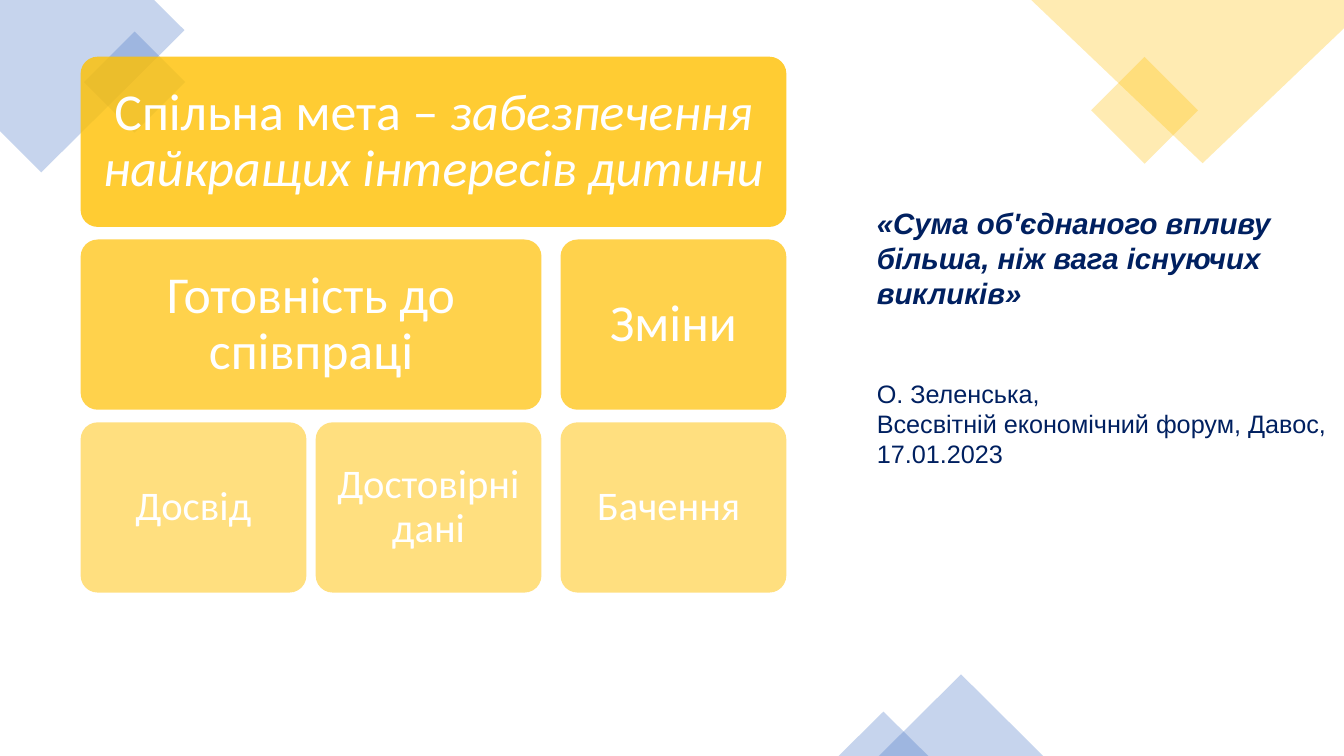
from typing import NamedTuple

from lxml import etree
from pptx import Presentation
from pptx.dml.color import RGBColor
from pptx.enum import shapes, text
from pptx.oxml import ns
from pptx.util import Pt

BLUE, GOLD, WHITE, NAVY = "4472C4", "FFC000", "FFFFFF", "002060"
KIND = shapes.MSO_SHAPE
COLUMN_LEFTS = (57.6, 225.5, 400.4)
COLUMN_WIDTH, ROW_TOP, ROW_HEIGHT, ROW_PITCH = 161.3, 40.5, 121.6, 130.6


class Decor(NamedTuple):
    kind: int
    left: float
    top: float
    width: float
    height: float
    hue: str
    rotation: float = 0


class Outline(NamedTuple):
    points: tuple
    hue: str


class Run(NamedTuple):
    words: str
    size: float
    italic: bool = False


class Block(NamedTuple):
    row: int
    first: int
    last: int
    opacity: int
    inset: float
    runs: tuple


class Line(NamedTuple):
    words: str
    size: float
    strong: bool = False
    before: float = 0


OUTLINES = (
    Outline(((0, 0), (110.2, 0), (131.8, 21.6), (29.5, 123.1), (0, 93.6)), BLUE),
    Outline(((736.6, 0), (960, 0), (960, 20.2), (859, 116.6)), GOLD),
)
DECORS = (
    Decor(KIND.RECTANGLE, 70.6, 33.1, 51.1, 51.1, BLUE, 315),
    Decor(KIND.RECTANGLE, 790.6, 51.8, 54, 54, GOLD, 315),
    Decor(KIND.ISOSCELES_TRIANGLE, 627.8, 481.7, 117.4, 58.3, BLUE),
    Decor(KIND.ISOSCELES_TRIANGLE, 599, 508.3, 64.1, 31.7, BLUE),
)
BLOCKS = (
    Block(0, 0, 2, 80, 10.8, (Run("Спільна мета – ", 37),
                              Run("забезпечення найкращих інтересів дитини", 37, True))),
    Block(1, 0, 1, 70, 10.8, (Run("Готовність до співпраці", 37),)),
    Block(2, 0, 0, 50, 8.6, (Run("Досвід", 29),)),
    Block(2, 1, 1, 50, 8.6, (Run("Достовірні дані", 29),)),
    Block(1, 2, 2, 70, 10.8, (Run("Зміни", 37),)),
    Block(2, 2, 2, 50, 8.6, (Run("Бачення ", 29),)),
)
QUOTE = (
    Line("«Сума об'єднаного впливу більша, ніж вага існуючих викликів»", 21, True),
    Line("О. Зеленська,", 18, before=48),
    Line("Всесвітній економічний форум, Давос, 17.01.2023", 18),
)


def color(value: str) -> RGBColor:
    return RGBColor.from_string(value)


def apply(target, values: dict) -> None:
    for name, value in values.items():
        setattr(target, name, value)


def paint(sp, hue: str, opacity: int) -> None:
    sp.shadow.inherit = False
    sp.line.fill.background()
    sp.fill.solid()
    sp.fill.fore_color.rgb = color(hue)
    srgb = sp.fill._xPr.find(".//" + ns.qn("a:srgbClr"))
    etree.SubElement(srgb, ns.qn("a:alpha"), val=str(opacity * 1000))


def add_run(p, words: str, hue: str, font: dict) -> None:
    r = p.add_run()
    r.text = words
    apply(r.font, font)
    r.font.color.rgb = color(hue)


def draw_outline(s, outline: Outline) -> None:
    start, *rest = outline.points
    builder = s.shapes.build_freeform(*map(Pt, start))
    builder.add_line_segments([(Pt(x), Pt(y)) for x, y in rest], close=True)
    paint(builder.convert_to_shape(), outline.hue, 30)


def draw_decor(s, decor: Decor) -> None:
    sp = s.shapes.add_shape(decor.kind, Pt(decor.left), Pt(decor.top),
                            Pt(decor.width), Pt(decor.height))
    sp.rotation = decor.rotation
    paint(sp, decor.hue, 30)


def draw_block(s, block: Block) -> None:
    left = COLUMN_LEFTS[block.first]
    width = COLUMN_LEFTS[block.last] + COLUMN_WIDTH - left
    sp = s.shapes.add_shape(KIND.ROUNDED_RECTANGLE, Pt(left),
                            Pt(ROW_TOP + block.row * ROW_PITCH), Pt(width), Pt(ROW_HEIGHT))
    sp.adjustments[0] = 0.1
    paint(sp, GOLD, block.opacity)
    tf = sp.text_frame
    apply(tf, {"word_wrap": True, "vertical_anchor": text.MSO_ANCHOR.MIDDLE})
    apply(tf, {f"margin_{side}": Pt(block.inset)
               for side in ("left", "top", "right", "bottom")})
    p = tf.paragraphs[0]
    apply(p, {"alignment": text.PP_ALIGN.CENTER, "line_spacing": 0.9})
    for run in block.runs:
        add_run(p, run.words, WHITE,
                {"name": "Calibri", "size": Pt(run.size), "italic": run.italic})


def draw_quote(s, lines: tuple) -> None:
    tf = s.shapes.add_textbox(Pt(619.2), Pt(144), Pt(353.5), Pt(193)).text_frame
    apply(tf, {"word_wrap": True, "vertical_anchor": text.MSO_ANCHOR.MIDDLE})
    for i, line in enumerate(lines):
        p = tf.add_paragraph() if i else tf.paragraphs[0]
        if line.before:
            p.space_before = Pt(line.before)
        add_run(p, line.words, NAVY,
                {"name": "Arial", "size": Pt(line.size),
                 "bold": line.strong, "italic": line.strong})


def main() -> None:
    prs = Presentation()
    apply(prs, {"slide_width": Pt(960), "slide_height": Pt(540)})
    s = prs.slides.add_slide(prs.slide_layouts[6])
    for outline in OUTLINES:
        draw_outline(s, outline)
    for decor in DECORS:
        draw_decor(s, decor)
    for block in BLOCKS:
        draw_block(s, block)
    draw_quote(s, QUOTE)
    prs.save("out.pptx")


if __name__ == "__main__":
    main()
